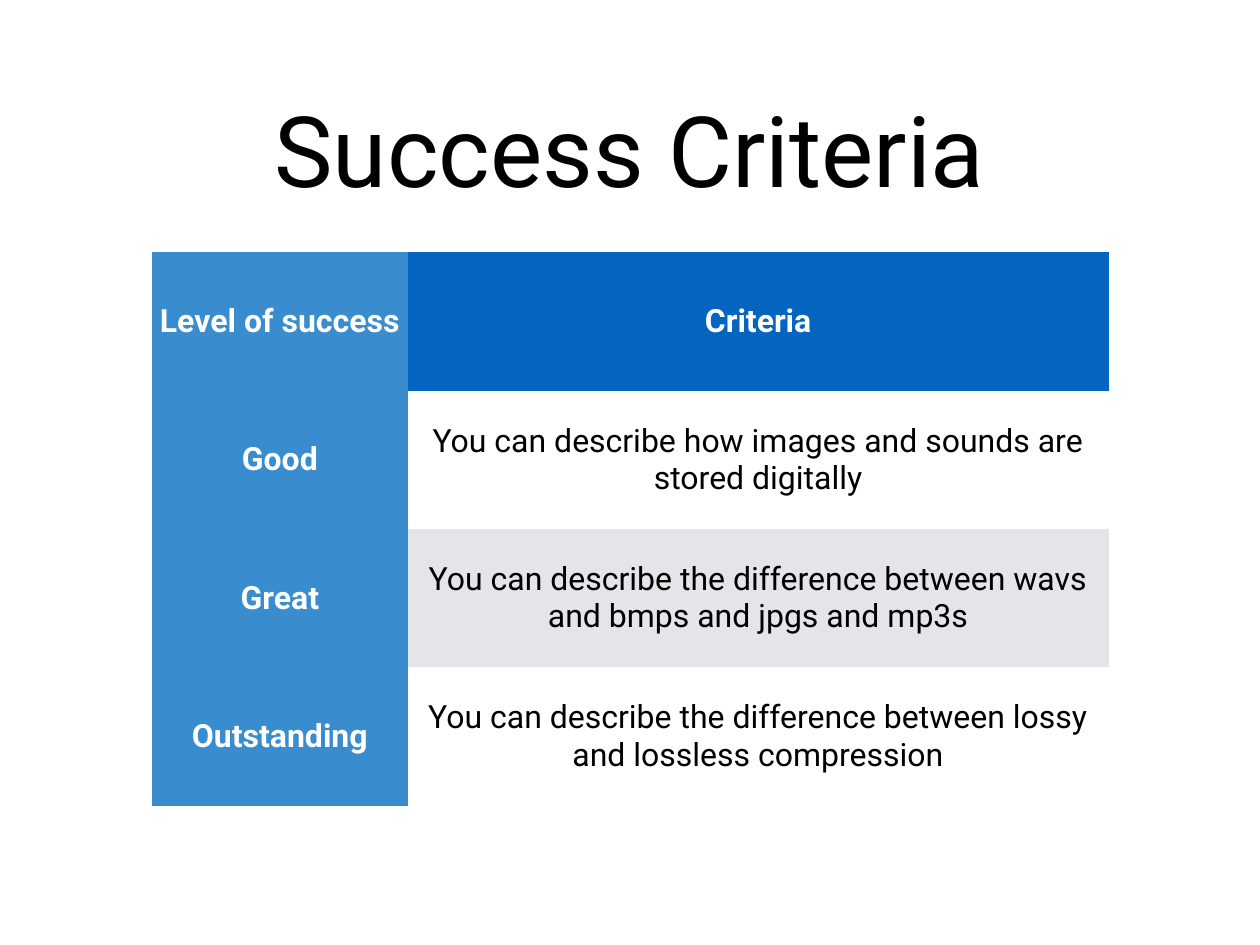
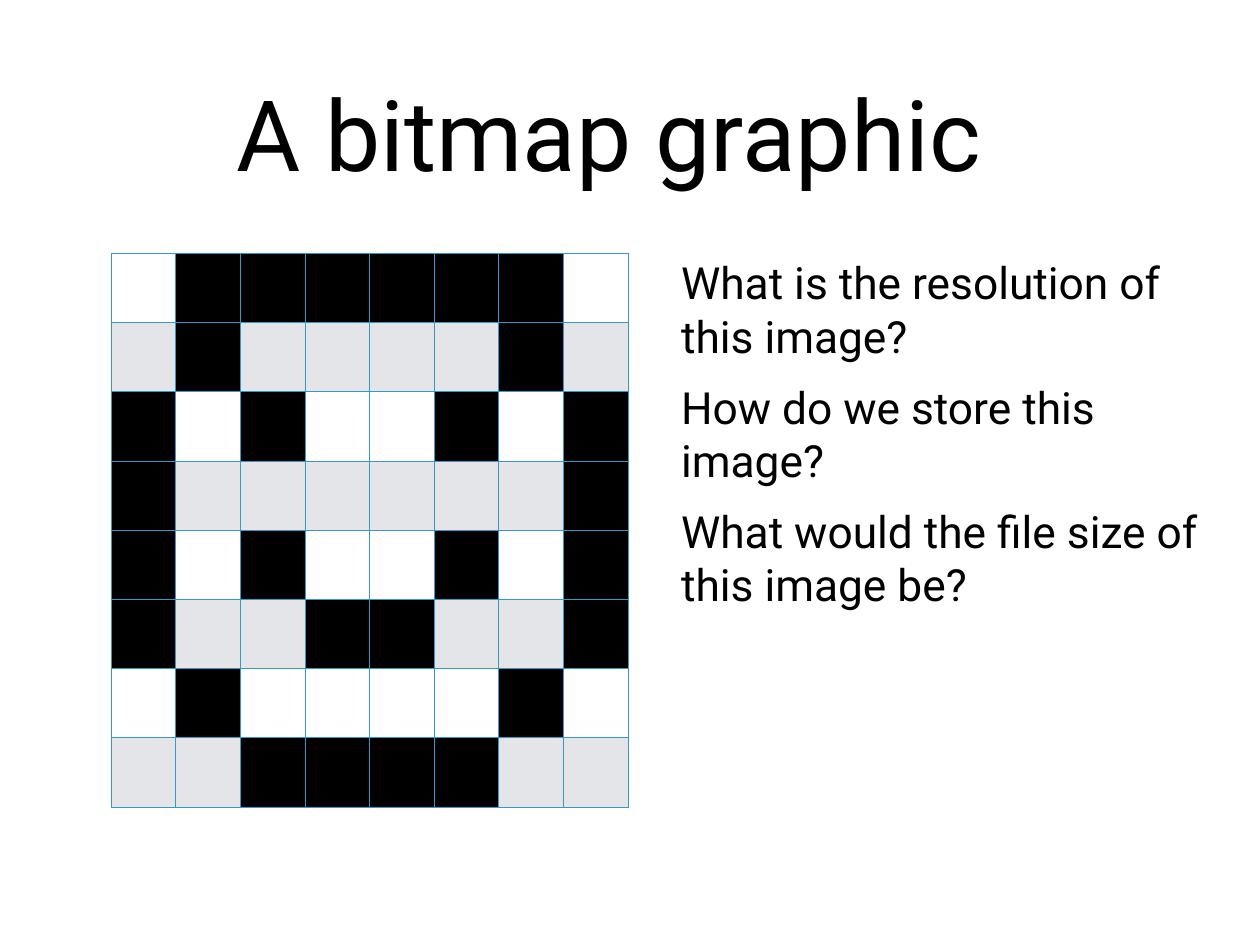
from pptx import Presentation
from pptx.dml.color import RGBColor
from pptx.enum.text import MSO_ANCHOR, PP_ALIGN
from pptx.oxml import parse_xml
from pptx.oxml.ns import nsdecls, qn
from pptx.util import Pt

BLACK = RGBColor(0x00, 0x00, 0x00)
WHITE = RGBColor(0xFF, 0xFF, 0xFF)
GREY = RGBColor(0xE3, 0xE5, 0xE8)
HEADER_BLUE = RGBColor(0x03, 0x65, 0xC0)
LEVEL_BLUE = RGBColor(0x39, 0x8C, 0xCE)
GRID_BLUE = RGBColor(0x37, 0x97, 0xC6)

TITLE = {"size": Pt(80), "color": BLACK, "align": PP_ALIGN.CENTER}
QUESTION = {"size": Pt(36), "color": BLACK, "align": PP_ALIGN.LEFT}
HEADING = {"size": Pt(26), "color": WHITE, "align": PP_ALIGN.CENTER, "bold": True}
CRITERION = {"size": Pt(26), "color": BLACK, "align": PP_ALIGN.CENTER, "bold": False}
FRAME = {"word_wrap": True, "vertical_anchor": MSO_ANCHOR.MIDDLE}
MARGINS = {f"margin_{side}": Pt(4) for side in ("left", "right", "top", "bottom")}
PLAIN_TABLE = "{2D5ABB26-0587-4C30-8999-92F81FD0307C}"


def write(frame, words, style):
    paragraph = frame.paragraphs[0]
    paragraph.alignment = style["align"]
    run = paragraph.add_run()
    run.text = words
    run.font.color.rgb = style["color"]
    font_values = {"name": "Roboto", "size": style["size"], "bold": style.get("bold")}
    for attribute, value in font_values.items():
        setattr(run.font, attribute, value)


def add_table(slide, left, top, widths, heights):
    table = slide.shapes.add_table(
        len(heights), len(widths), Pt(left), Pt(top), Pt(sum(widths)), Pt(sum(heights))
    ).table
    table.first_row = table.horz_banding = False
    table._tbl.tblPr.find(qn("a:tableStyleId")).text = PLAIN_TABLE
    for column, width in zip(table.columns, widths):
        column.width = Pt(width)
    for row, height in zip(table.rows, heights):
        row.height = Pt(height)
    return table


deck = Presentation()
deck.slide_width, deck.slide_height = Pt(1024), Pt(768)
criteria_slide, bitmap_slide = [deck.slides.add_slide(deck.slide_layouts[6]) for _ in range(2)]

texts = [
    (criteria_slide, "Success Criteria", TITLE, (75, 35.5, 874, 170)),
    (bitmap_slide, "A bitmap graphic", TITLE, (58, 22.5, 874, 170)),
]
questions = [
    "What is the resolution of this image?",
    "How do we store this image?",
    "What would the file size of this image be?",
]
for index, question in enumerate(questions):
    texts.append((bitmap_slide, question, QUESTION, (549.5, 204 + 101 * index, 453, 94)))

for slide, words, style, place in texts:
    frame = slide.shapes.add_textbox(*[Pt(length) for length in place]).text_frame
    for attribute, value in {**FRAME, **MARGINS}.items():
        setattr(frame, attribute, value)
    write(frame, words, style)

levels = [
    ("Level of success", "Criteria", HEADING, HEADER_BLUE),
    ("Good", "You can describe how images and sounds are stored digitally", CRITERION, WHITE),
    ("Great", "You can describe the difference between wavs and bmps and jpgs and mp3s", CRITERION, GREY),
    ("Outstanding", "You can describe the difference between lossy and lossless compression", CRITERION, WHITE),
]
criteria = add_table(criteria_slide, 123.5, 205, [208, 569.5], [112.5] * len(levels))
for row, (level, criterion, style, fill) in enumerate(levels):
    entries = [(level, HEADING, LEVEL_BLUE), (criterion, style, fill)]
    for column, (words, cell_style, colour) in enumerate(entries):
        cell = criteria.cell(row, column)
        cell.vertical_anchor = MSO_ANCHOR.MIDDLE
        for attribute, value in MARGINS.items():
            setattr(cell, attribute, value)
        cell.fill.solid()
        cell.fill.fore_color.rgb = colour
        write(cell.text_frame, words, cell_style)

pixels = [
    ".######.",
    ".#....#.",
    "#.#..#.#",
    "#......#",
    "#.#..#.#",
    "#..##..#",
    ".#....#.",
    "..####..",
]
bitmap = add_table(bitmap_slide, 90.5, 206, [52.5] * 8, [56.25] * 8)
for row, line in enumerate(pixels):
    for column, pixel in enumerate(line):
        cell = bitmap.cell(row, column)
        for edge in ("lnL", "lnR", "lnT", "lnB"):
            cell._tc.get_or_add_tcPr().append(parse_xml(
                f'<a:{edge} {nsdecls("a")} w="{Pt(1)}"><a:solidFill>'
                f'<a:srgbClr val="{GRID_BLUE}"/></a:solidFill></a:{edge}>'
            ))
        cell.fill.solid()
        cell.fill.fore_color.rgb = BLACK if pixel == "#" else (WHITE, GREY)[row % 2]

deck.save("out.pptx")
